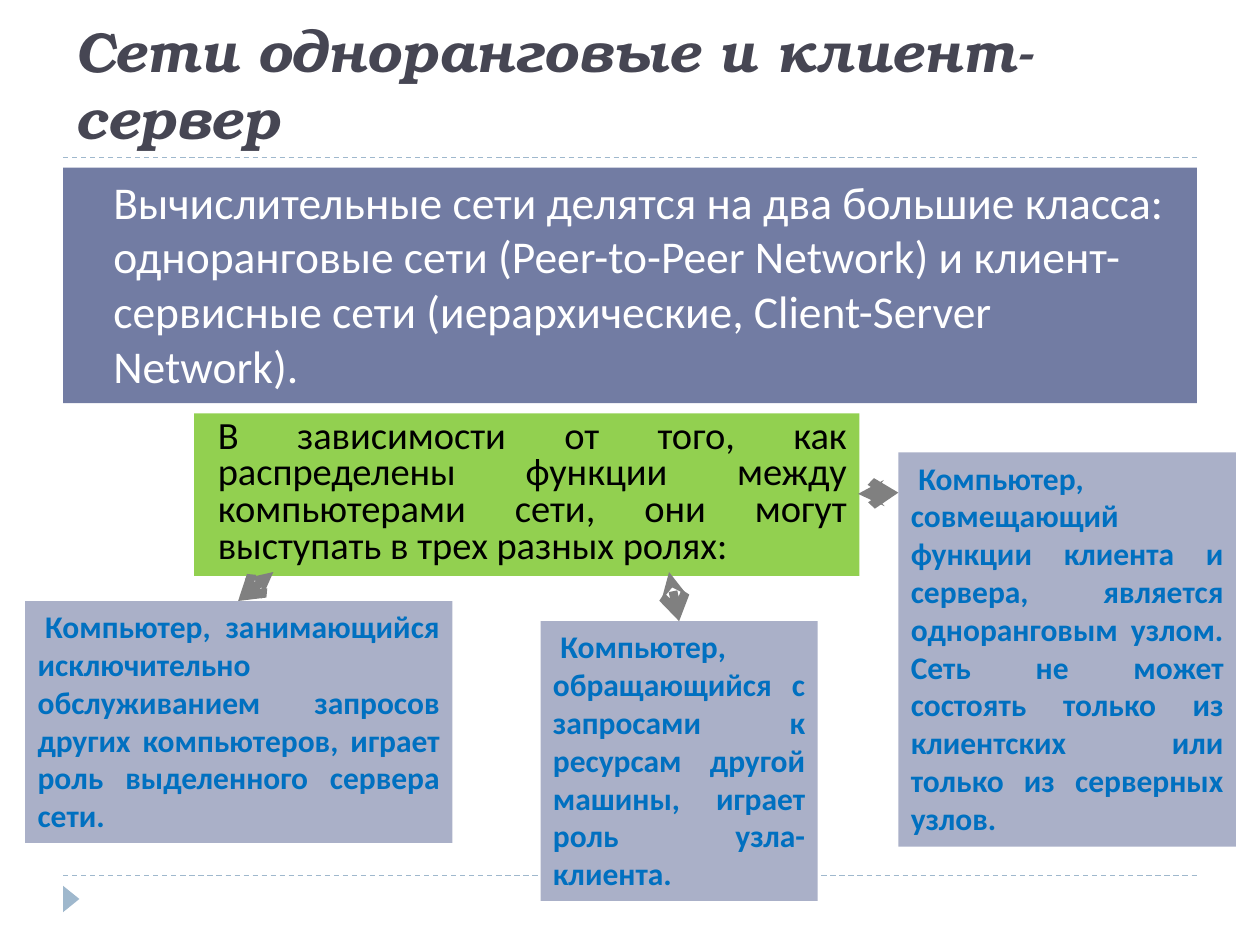
"""Builds the slide on peer-to-peer and client-server networks."""
from dataclasses import dataclass

from lxml.etree import SubElement
from pptx import Presentation
from pptx.dml.color import RGBColor as Rgb
from pptx.enum.dml import MSO_LINE_DASH_STYLE as Dash
from pptx.enum.shapes import MSO_CONNECTOR as Connector, MSO_SHAPE as Preset
from pptx.enum.text import MSO_ANCHOR as Anchor, MSO_AUTO_SIZE as AutoSize, PP_ALIGN as Align
from pptx.oxml.ns import qn
from pptx.util import Emu, Inches, Pt

COLUMNS, ROWS = 100, 75
UNIT = Inches(10) // COLUMNS


@dataclass(frozen=True)
class Theme:
    heading_font: str = "TeX Gyre Bonum"
    text_font: str = "Calibri"
    heading: str = "464653"
    intro: str = "FFFFFF"
    intro_fill: str = "727CA3"
    question: str = "000000"
    question_fill: str = "92D050"
    role: str = "0070C0"
    role_fill: str = "AAB0C8"
    accent: str = "9FB8CD"
    arrow: str = "808080"
    heading_size: int = 32
    intro_size: int = 26
    question_size: int = 22
    role_size: int = 18
    rule_width: float = 0.75
    arrow_width: float = 5


@dataclass(frozen=True)
class Area:
    column: float
    row: float
    columns: float
    rows: float

    def lengths(self) -> list[Emu]:
        return [grid(n) for n in (self.column, self.row, self.columns, self.rows)]


@dataclass(frozen=True)
class Style:
    color: str
    size: int
    fill: str
    bold: bool = False
    margin: float = 0
    indent: float = 0
    line_spacing: float = 1


@dataclass(frozen=True)
class Role:
    area: Area
    text: str
    arrow: tuple[float, float, float, float]


THEME = Theme()
INTRO = Style(THEME.intro, THEME.intro_size, THEME.intro_fill, margin=3)
QUESTION = Style(THEME.question, THEME.question_size, THEME.question_fill,
                 margin=0.9, line_spacing=0.8)
ROLE = Style(THEME.role, THEME.role_size, THEME.role_fill, bold=True, indent=0.6)

ROLES = [
    Role(Area(2, 47.7, 33.9, 19.2),
         "Компьютер, занимающийся исключительно обслуживанием запросов других "
         "компьютеров, играет роль выделенного сервера сети.",
         (21.7, 45.4, 18.9, 47.7)),
    Role(Area(42.9, 49.3, 22, 22.2),
         "Компьютер, обращающийся с запросами к ресурсам другой машины, играет "
         "роль узла-клиента.",
         (53.1, 45.4, 53.9, 49.3)),
    Role(Area(71.3, 35.9, 26.8, 31.3),
         "Компьютер, совмещающий функции клиента и сервера, является одноранговым "
         "узлом. Сеть не может состоять только из клиентских или только из "
         "серверных узлов.",
         (68.1, 39.2, 71.3, 39.1)),
]


def grid(count: float) -> Emu:
    return Emu(round(count * UNIT))


def place(shape, area: Area) -> None:
    shape.left, shape.top, shape.width, shape.height = area.lengths()


def write(shape, text: str, style: Style, align: Align, space_before: float) -> None:
    shape.fill.solid()
    shape.fill.fore_color.rgb = Rgb.from_string(style.fill)
    frame = shape.text_frame
    frame.text = text
    frame.word_wrap = True
    frame.auto_size = AutoSize.NONE
    frame.vertical_anchor = Anchor.TOP
    paragraph = frame.paragraphs[0]
    paragraph.alignment = align
    paragraph.line_spacing = style.line_spacing
    paragraph.space_before = Pt(space_before)
    font = paragraph.font
    font.name, font.size, font.bold = THEME.text_font, Pt(style.size), style.bold
    font.color.rgb = Rgb.from_string(style.color)
    properties = paragraph._p.get_or_add_pPr()
    properties.set("marL", str(grid(style.margin)))
    properties.set("indent", str(grid(style.indent)))
    properties.insert_element_before(
        properties.makeelement(qn("a:buNone")), "a:tabLst", "a:defRPr", "a:extLst")


def add_preset(slide, preset: Preset, area: Area, fill: str):
    shape = slide.shapes.add_shape(preset, *area.lengths())
    shape.shadow.inherit = False
    shape.fill.solid()
    shape.fill.fore_color.rgb = Rgb.from_string(fill)
    shape.line.fill.background()
    return shape


def add_panel(slide, area: Area, text: str, style: Style) -> None:
    panel = add_preset(slide, Preset.RECTANGLE, area, style.fill)
    write(panel, text, style, Align.JUSTIFY, style.size * 0.2)


def add_line(slide, ends: tuple[float, float, float, float], color: str, width: float):
    connector = slide.shapes.add_connector(Connector.STRAIGHT, *map(grid, ends))
    connector.line.color.rgb = Rgb.from_string(color)
    connector.line.width = Pt(width)
    SubElement(connector._element.spPr, qn("a:effectLst"))
    return connector


def add_rule(slide, row: float) -> None:
    rule = add_line(slide, (5, row, 95, row), THEME.accent, THEME.rule_width)
    rule.line.dash_style = Dash.DASH


def add_arrow(slide, ends: tuple[float, float, float, float]) -> None:
    arrow = add_line(slide, ends, THEME.arrow, THEME.arrow_width)
    outline = arrow.line._get_or_add_ln()
    SubElement(outline, qn("a:headEnd"), type="stealth")
    SubElement(outline, qn("a:tailEnd"), type="arrow")


def add_heading(slide, text: str) -> None:
    heading = slide.shapes.title
    place(heading, Area(5, 1.7, 90, 10.8))
    frame = heading.text_frame
    frame.text = text
    frame.word_wrap = True
    frame.auto_size = AutoSize.NONE
    frame.vertical_anchor = Anchor.BOTTOM
    paragraph = frame.paragraphs[0]
    paragraph.alignment = Align.LEFT
    font = paragraph.font
    font.name, font.size = THEME.heading_font, Pt(THEME.heading_size)
    font.bold = font.italic = True
    font.color.rgb = Rgb.from_string(THEME.heading)


def main() -> None:
    deck = Presentation()
    deck.slide_width, deck.slide_height = grid(COLUMNS), grid(ROWS)
    slide = deck.slides.add_slide(deck.slide_layouts[1])

    for row in (12.5, 69.5):
        add_rule(slide, row)
    marker = add_preset(slide, Preset.ISOSCELES_TRIANGLE, Area(4.6, 70.7, 2.1, 1.3), THEME.accent)
    marker.rotation = 90

    add_heading(slide, "Сети одноранговые и клиент-сервер")
    intro = slide.placeholders[1]
    place(intro, Area(5, 13.3, 90, 18.7))
    write(intro,
          "Вычислительные сети делятся на два большие класса: одноранговые сети "
          "(Peer-to-Peer Network) и клиент-сервисные сети (иерархические, "
          "Client-Server Network).",
          INTRO, Align.LEFT, 6)

    add_panel(slide, Area(15.4, 32.8, 52.8, 12.9),
              "В зависимости от того, как распределены функции между компьютерами "
              "сети, они могут выступать в трех разных ролях:", QUESTION)
    for role in ROLES:
        add_panel(slide, role.area, role.text, ROLE)
    for role in ROLES:
        add_arrow(slide, role.arrow)
    deck.save("out.pptx")


if __name__ == "__main__":
    main()
